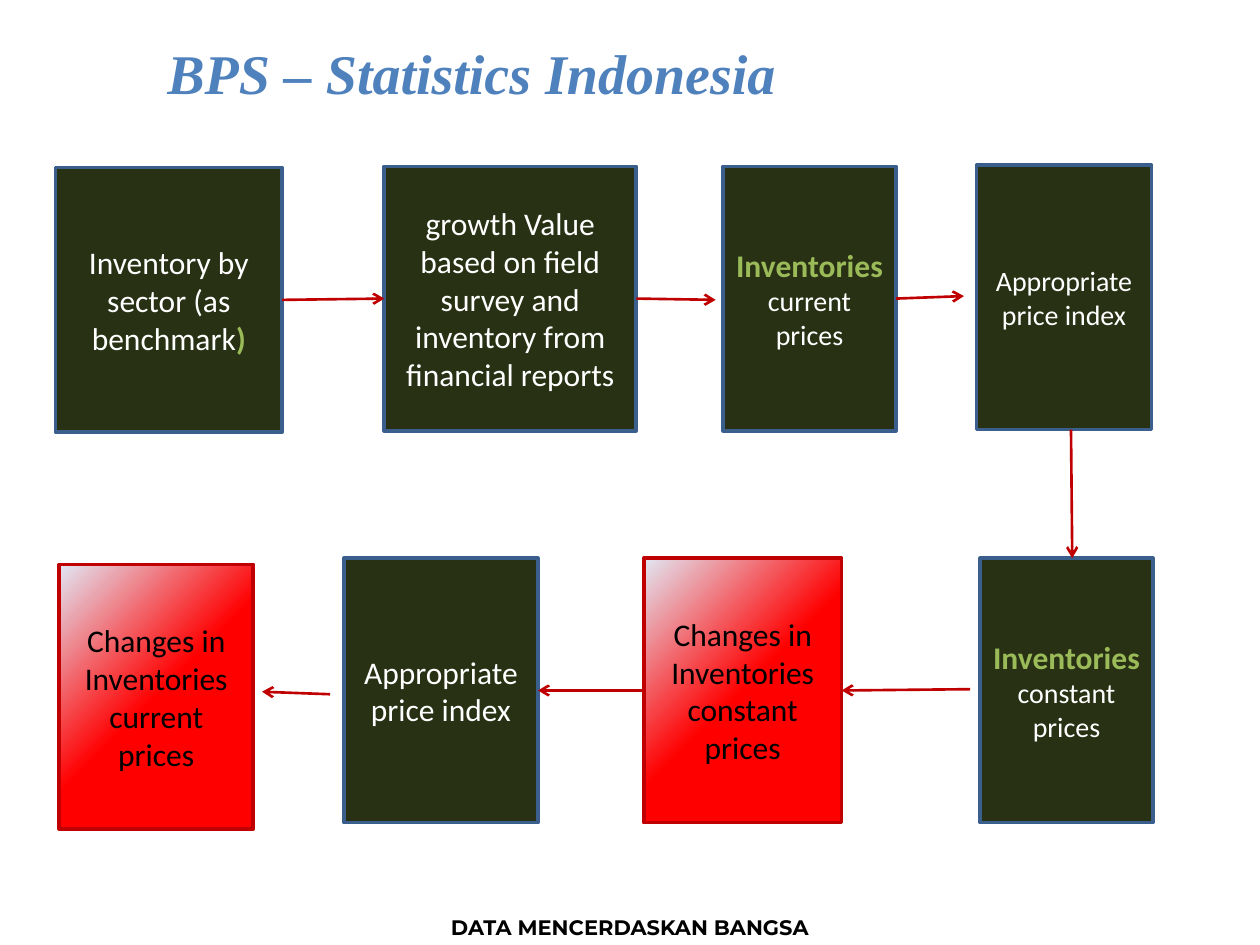
import lxml.etree
import pptx
import pptx.util
import pptx.dml.color
import pptx.enum.shapes
import pptx.enum.text
import pptx.oxml
import pptx.oxml.ns

Inches = pptx.util.Inches
TOP, LEFT, BOTTOM, RIGHT = range(4)
DARK, BLUE, RED = "283114", "3A5F8C", "C00000"
WHITE, BLACK, GREEN = "FFFFFF", "000000", "9BBB59"
GLOW = (
    '<a:gradFill xmlns:a="http://schemas.openxmlformats.org/drawingml/2006/main" rotWithShape="1">'
    '<a:gsLst><a:gs pos="50000"><a:srgbClr val="FF0000"/></a:gs>'
    '<a:gs pos="100000"><a:srgbClr val="E1E8F5"/></a:gs></a:gsLst>'
    '<a:path path="circle"><a:fillToRect l="100000" t="100000"/></a:path></a:gradFill>'
)


def paint(color, value):
    """Set a colour format from a hex string."""
    color.rgb = pptx.dml.color.RGBColor.from_string(value)


def style(font, size, color, name="Calibri", bold=False, italic=False):
    """Format a font."""
    font.name, font.size = name, pptx.util.Pt(size)
    font.bold, font.italic = bold, italic
    paint(font.color, color)


def set_line(frame, text, *look, **more):
    """Fill a text frame with one centred line."""
    frame.word_wrap = True
    para = frame.paragraphs[0]
    para.text = text
    para.alignment = pptx.enum.text.PP_ALIGN.CENTER
    style(para.font, *look, **more)


def add_title(slide, text, box):
    """Place and format the slide title."""
    title = slide.shapes.title
    title.left, title.top, title.width, title.height = map(Inches, box)
    title.text_frame.vertical_anchor = pptx.enum.text.MSO_ANCHOR.MIDDLE
    set_line(title.text_frame, text, 32, "4F81BD", "Times New Roman", bold=True, italic=True)


def add_footer(slide, text, box):
    """Add the motto along the bottom edge."""
    foot = slide.shapes.add_textbox(*map(Inches, box))
    set_line(foot.text_frame, text, 12, BLACK, "Montserrat", bold=True)


def add_box(slide, box, runs, result=False):
    """Add one step whose runs are (text, size, colour, bold)."""
    shape = slide.shapes.add_shape(
        pptx.enum.shapes.MSO_SHAPE.RECTANGLE, *map(Inches, box))
    shape.shadow.inherit = False
    if result:
        outline = shape.line._get_or_add_ln()
        outline.addprevious(pptx.oxml.parse_xml(GLOW))
    else:
        shape.fill.solid()
        paint(shape.fill.fore_color, DARK)
    paint(shape.line.color, RED if result else BLUE)
    shape.line.width = pptx.util.Pt(2)
    frame = shape.text_frame
    frame.word_wrap = True
    frame.vertical_anchor = pptx.enum.text.MSO_ANCHOR.MIDDLE
    para = frame.paragraphs[0]
    para.alignment = pptx.enum.text.PP_ALIGN.CENTER
    for text, size, color, bold in runs:
        run = para.add_run()
        run.text = text
        if len(runs) > 1:
            style(run.font, size, color, bold=bold)
        else:
            style(para.font, size, color, bold=bold)
    return shape


def add_arrow(slide, start, end, source=None, target=None):
    """Draw an arrow, joined to a (shape, side) at either end if given."""
    line = slide.shapes.add_connector(
        pptx.enum.shapes.MSO_CONNECTOR.STRAIGHT, *map(Inches, start + end))
    if source:
        line.begin_connect(*source)
    if target:
        line.end_connect(*target)
    paint(line.line.color, RED)
    line.line.width = pptx.util.Pt(1.5)
    tail = pptx.oxml.ns.qn("a:tailEnd")
    lxml.etree.SubElement(line.line._get_or_add_ln(), tail, type="arrow")
    lxml.etree.SubElement(line._element.spPr, pptx.oxml.ns.qn("a:effectLst"))


def add_flow(slide, left, top):
    """Add the two rows of steps and the arrows between them."""
    high, low = top, top + 3.11

    def step(across, row, width, *runs, result=False):
        """Add a step at an offset from the left of the flow."""
        return add_box(slide, (left + across, row, width, 2.1), runs, result)

    def stock(across, row, basis):
        """Add an inventories step."""
        return step(across, row, 1.37, ("Inventories ", 18, GREEN, True),
                    (basis, 16, WHITE, False))

    def change(across, row, width, basis):
        """Add a result step."""
        text = f"Changes in Inventories {basis} prices"
        return step(across, row, width, (text, 18, BLACK, False), result=True)

    base = step(0, high + 0.01, 1.8, ("Inventory by sector (as benchmark", 18, WHITE, False),
                (")", 18, GREEN, True))
    growth = step(2.61, high, 2, (
        "growth Value based on field survey and inventory from financial reports",
        18, WHITE, False))
    current = stock(5.3, high, "current prices")
    step(7.31, high - 0.01, 1.39, ("Appropriate price index", 16, WHITE, False))
    stock(7.34, low, "constant prices")
    real = change(4.67, low, 1.57, "constant")
    index = step(2.29, low, 1.54, ("Appropriate price index", 18, WHITE, False))
    change(0.03, low + 0.05, 1.54, "current")

    arrows = [
        ((1.8, 1.06), (2.61, 1.05), (base, RIGHT), (growth, LEFT)),
        ((4.61, 1.05), (5.24, 1.06), (growth, RIGHT), None),
        ((6.67, 1.05), (7.21, 1.03), (current, RIGHT), None),
        ((8.06, 2.09), (8.07, 3.11), None, None),
        ((7.26, 4.15), (6.24, 4.16), None, (real, RIGHT)),
        ((4.67, 4.16), (3.83, 4.16), (real, LEFT), (index, RIGHT)),
        ((2.18, 4.19), (1.64, 4.17), None, None),
    ]
    for start, end, source, target in arrows:
        add_arrow(slide, (left + start[0], top + start[1]),
                  (left + end[0], top + end[1]), source, target)


def main():
    """Build the slide and save it."""
    deck = pptx.Presentation()
    deck.slide_width, deck.slide_height = Inches(10), Inches(7.5)
    slide = deck.slides.add_slide(deck.slide_layouts[5])
    add_footer(slide, "DATA MENCERDASKAN BANGSA", (0, 7.21, 10, 0.3))
    add_title(slide, "BPS – Statistics Indonesia", (0.83, 0.25, 5.83, 0.64))
    add_flow(slide, 0.44, 1.32)
    deck.save("out.pptx")


if __name__ == "__main__":
    main()
